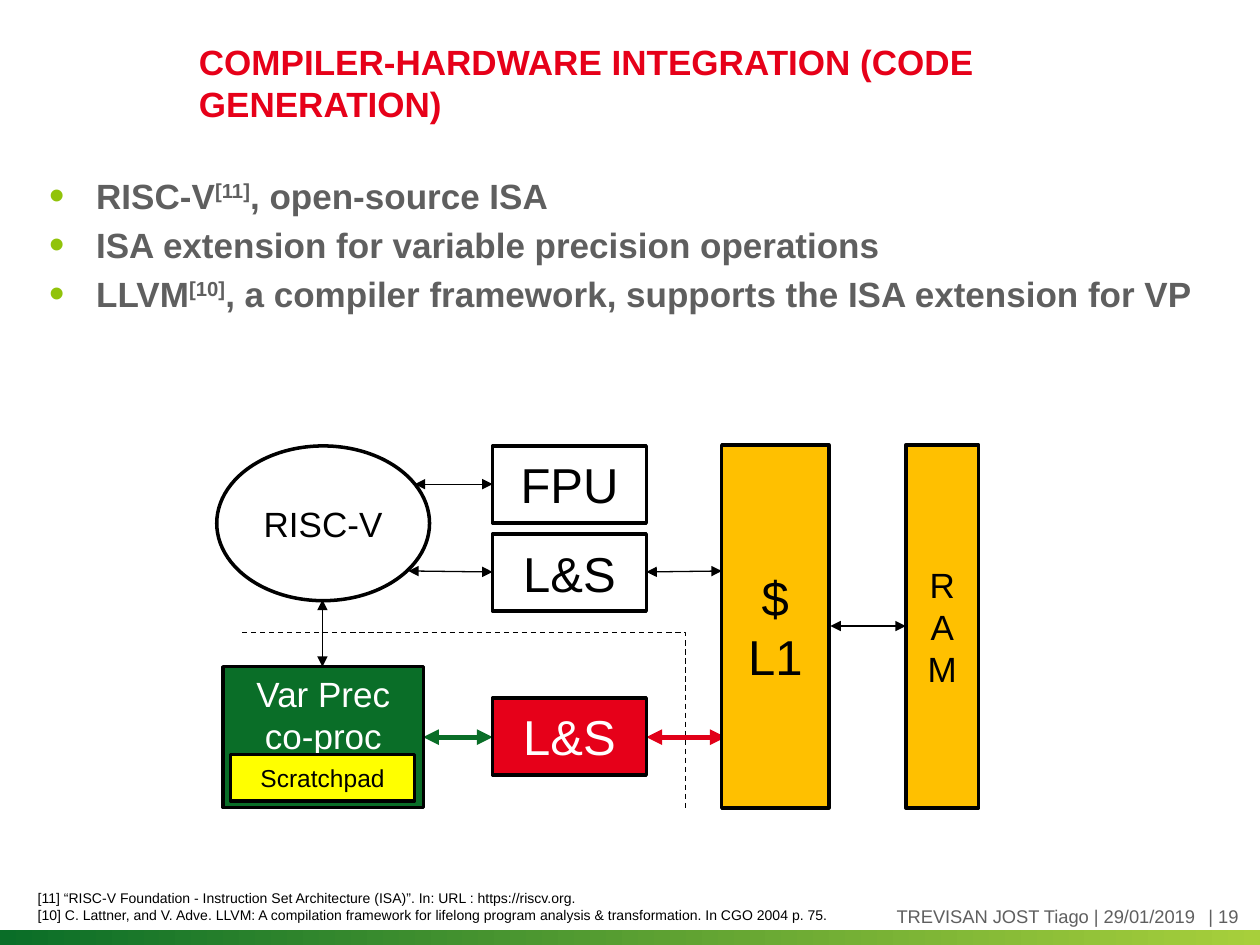
from dataclasses import dataclass
from typing import Optional

from lxml.etree import SubElement
from pptx import Presentation
from pptx.dml.color import RGBColor
from pptx.enum.dml import MSO_LINE
from pptx.enum.shapes import MSO_CONNECTOR, MSO_SHAPE
from pptx.enum.text import MSO_ANCHOR, MSO_AUTO_SIZE, PP_ALIGN
from pptx.oxml.ns import qn
from pptx.util import Cm, Pt


@dataclass(frozen=True)
class Theme:
    font: str = "Arial"
    green: str = "0A6E28"
    lime: str = "91C30A"
    pale_lime: str = "A7CF3B"
    red: str = "E60019"
    arrow_red: str = "E10018"
    amber: str = "FFC000"
    yellow: str = "FFFF00"
    grey: str = "5F5F5F"
    black: str = "000000"
    white: str = "FFFFFF"
    large: float = 28
    body: float = 20
    label: float = 14
    footer: float = 10.5
    reference: float = 8


THEME = Theme()


@dataclass(frozen=True)
class Block:
    text: str
    left: float
    top: float
    width: float
    height: float
    fill: str = THEME.white
    size: float = THEME.large
    color: str = THEME.black
    kind: MSO_SHAPE = MSO_SHAPE.RECTANGLE
    anchor: MSO_ANCHOR = MSO_ANCHOR.MIDDLE


@dataclass(frozen=True)
class Link:
    start: tuple[float, float]
    end: tuple[float, float]
    color: str = THEME.black
    width: float = 0.75


@dataclass(frozen=True)
class Style:
    size: float
    color: str
    bold: bool = False
    align: Optional[PP_ALIGN] = None


UNIT_LEFT, UNIT_WIDTH, UNIT_HEIGHT = 9.93, 3.1, 1.55
UNIT_RIGHT = UNIT_LEFT + UNIT_WIDTH
MEMORY_TOP, MEMORY_HEIGHT = 8.97, 7.32
CACHE_LEFT, RAM_LEFT = 14.55, 18.26

BLOCKS = [
    Block("Var Prec\nco-proc", 4.5, 13.44, 4.04, 2.84, THEME.green, THEME.body,
          THEME.white, anchor=MSO_ANCHOR.TOP),
    Block("L&S", UNIT_LEFT, 14.07, UNIT_WIDTH, UNIT_HEIGHT, THEME.red, color=THEME.white),
    Block("RISC-V", 4.37, 8.99, 4.29, 3.12, size=THEME.body, kind=MSO_SHAPE.OVAL),
    Block("FPU", UNIT_LEFT, 8.99, UNIT_WIDTH, UNIT_HEIGHT),
    Block("L&S", UNIT_LEFT, 10.77, UNIT_WIDTH, UNIT_HEIGHT),
    Block("Scratchpad", 4.65, 15.21, 3.71, 0.94, THEME.yellow, THEME.label),
    Block("$\nL1", CACHE_LEFT, MEMORY_TOP, 2.16, MEMORY_HEIGHT, THEME.amber),
    Block("RAM", RAM_LEFT, MEMORY_TOP, 1.47, MEMORY_HEIGHT, THEME.amber, THEME.body),
]

LINKS = [
    Link((6.5, 13.44), (6.5, 12.09)),
    Link((8.53, 14.86), (UNIT_LEFT, 14.86), THEME.green, 3),
    Link((UNIT_RIGHT, 14.86), (14.63, 14.86), THEME.arrow_red, 3),
    Link((8.36, 9.76), (UNIT_LEFT, 9.76)),
    Link((8.23, 11.51), (UNIT_LEFT, 11.53)),
    Link((UNIT_RIGHT, 11.53), (CACHE_LEFT, 11.51)),
    Link((16.74, 12.62), (RAM_LEFT, 12.62)),
]

BULLETS = [
    [("RISC-V", False), ("[11]", True), (", open-source ISA", False)],
    [("ISA extension for variable precision operations", False)],
    [("LLVM", False), ("[10]", True),
     (", a compiler framework, supports the ISA extension for VP", False)],
]

REFERENCES = [
    "[11] “RISC-V Foundation - Instruction Set Architecture (ISA)”. In: URL : https://riscv.org.",
    "[10] C. Lattner, and V. Adve. LLVM: A compilation framework for lifelong program "
    "analysis & transformation. In CGO\u00a02004 p. 75.",
]


def rgb(color: str) -> RGBColor:
    return RGBColor.from_string(color)


def add_run(paragraph, text: str, style: Style, superscript: bool = False) -> None:
    run = paragraph.add_run()
    run.text = text
    run.font.name = THEME.font
    run.font.size = Pt(style.size)
    run.font.bold = style.bold
    run.font.color.rgb = rgb(style.color)
    if superscript:
        run.font._element.set("baseline", "30000")


def fill_paragraph(paragraph, text: str, style: Style) -> None:
    paragraph.alignment = style.align
    for index, line in enumerate(text.split("\n")):
        if index:
            paragraph.add_line_break()
        add_run(paragraph, line, style)


def prepare_frame(frame, anchor: MSO_ANCHOR, inset: Optional[float] = None) -> None:
    frame.word_wrap = True
    frame.auto_size = MSO_AUTO_SIZE.NONE
    frame.vertical_anchor = anchor
    if inset is not None:
        frame.margin_left = frame.margin_right = Cm(inset)
        frame.margin_top = frame.margin_bottom = Cm(inset)


def add_text(slide, left: float, top: float, width: float, height: float,
             lines: list[str], style: Style, anchor: MSO_ANCHOR = MSO_ANCHOR.TOP,
             inset: Optional[float] = None) -> None:
    frame = slide.shapes.add_textbox(Cm(left), Cm(top), Cm(width), Cm(height)).text_frame
    prepare_frame(frame, anchor, inset)
    for index, line in enumerate(lines):
        paragraph = frame.add_paragraph() if index else frame.paragraphs[0]
        fill_paragraph(paragraph, line, style)


def add_title(slide, text: str) -> None:
    title = slide.shapes.title
    title.left, title.top, title.width, title.height = Cm(4.01), Cm(0.58), Cm(20.37), Cm(2.16)
    prepare_frame(title.text_frame, MSO_ANCHOR.MIDDLE, 0)
    paragraph = title.text_frame.paragraphs[0]
    paragraph.space_after = Pt(4)
    fill_paragraph(paragraph, text, Style(THEME.body, THEME.red, True, PP_ALIGN.LEFT))


def add_bullets(slide) -> None:
    frame = slide.shapes.add_textbox(Cm(0.99), Cm(3.51), Cm(23.39), Cm(14.02)).text_frame
    prepare_frame(frame, MSO_ANCHOR.TOP, 0)
    for index, runs in enumerate(BULLETS):
        paragraph = frame.add_paragraph() if index else frame.paragraphs[0]
        paragraph.space_after = Pt(4)
        properties = paragraph._p.get_or_add_pPr()
        properties.set("marL", str(Cm(0.95)))
        properties.set("indent", str(-Cm(0.95)))
        SubElement(SubElement(properties, qn("a:buClr")), qn("a:srgbClr"), val=THEME.lime)
        SubElement(properties, qn("a:buSzPct"), val="125000")
        SubElement(properties, qn("a:buFont"), typeface=THEME.font)
        SubElement(properties, qn("a:buChar"), char="•")
        for text, superscript in runs:
            add_run(paragraph, text, Style(THEME.body, THEME.grey, True), superscript)


def add_block(slide, block: Block) -> None:
    shape = slide.shapes.add_shape(block.kind, Cm(block.left), Cm(block.top),
                                   Cm(block.width), Cm(block.height))
    shape.shadow.inherit = False
    shape.fill.solid()
    shape.fill.fore_color.rgb = rgb(block.fill)
    shape.line.color.rgb = rgb(THEME.black)
    shape.line.width = Pt(2)
    prepare_frame(shape.text_frame, block.anchor)
    fill_paragraph(shape.text_frame.paragraphs[0], block.text,
                   Style(block.size, block.color, align=PP_ALIGN.CENTER))


def add_link(slide, link: Link, kind: MSO_CONNECTOR = MSO_CONNECTOR.STRAIGHT):
    connector = slide.shapes.add_connector(kind, *map(Cm, link.start + link.end))
    connector.line.color.rgb = rgb(link.color)
    connector.line.width = Pt(link.width)
    SubElement(connector._element.spPr, qn("a:effectLst"))
    return connector


def add_arrow(slide, link: Link) -> None:
    outline = add_link(slide, link).line._get_or_add_ln()
    for end in ("a:headEnd", "a:tailEnd"):
        SubElement(outline, qn(end), type="triangle")


def add_boundary(slide) -> None:
    boundary = add_link(slide, Link((4.88, 12.75), (13.82, 16.28)), MSO_CONNECTOR.ELBOW)
    boundary.line.dash_style = MSO_LINE.DASH
    boundary._element.spPr.find(qn("a:prstGeom")).set("prst", "bentConnector2")


def add_footer(slide) -> None:
    bar = slide.shapes.add_shape(MSO_SHAPE.RECTANGLE, 0, Cm(18.75), Cm(25.4), Cm(0.3))
    bar.shadow.inherit = False
    bar.line.fill.background()
    bar.fill.gradient()
    bar.fill.gradient_angle = 0
    for stop, color in zip(bar.fill.gradient_stops, (THEME.green, THEME.pale_lime)):
        stop.color.rgb = rgb(color)
    add_text(slide, 24.36, 18.24, 1.04, 0.46, ["| 19"],
             Style(THEME.footer, THEME.grey), MSO_ANCHOR.MIDDLE, 0)
    add_text(slide, 0, 18.24, 24.1, 0.46, ["TREVISAN JOST Tiago | 29/01/2019"],
             Style(THEME.footer, THEME.grey, align=PP_ALIGN.RIGHT), MSO_ANCHOR.MIDDLE, 0)


def main() -> None:
    presentation = Presentation()
    presentation.slide_width, presentation.slide_height = Cm(25.4), Cm(19.05)
    slide = presentation.slides.add_slide(presentation.slide_layouts[5])
    add_footer(slide)
    add_title(slide, "COMPILER-HARDWARE INTEGRATION (CODE GENERATION)")
    add_bullets(slide)
    add_boundary(slide)
    for link in LINKS:
        add_arrow(slide, link)
    for block in BLOCKS:
        add_block(slide, block)
    add_text(slide, 0.51, 17.81, 16.66, 0.94, REFERENCES, Style(THEME.reference, THEME.black))
    presentation.save("out.pptx")


if __name__ == "__main__":
    main()
